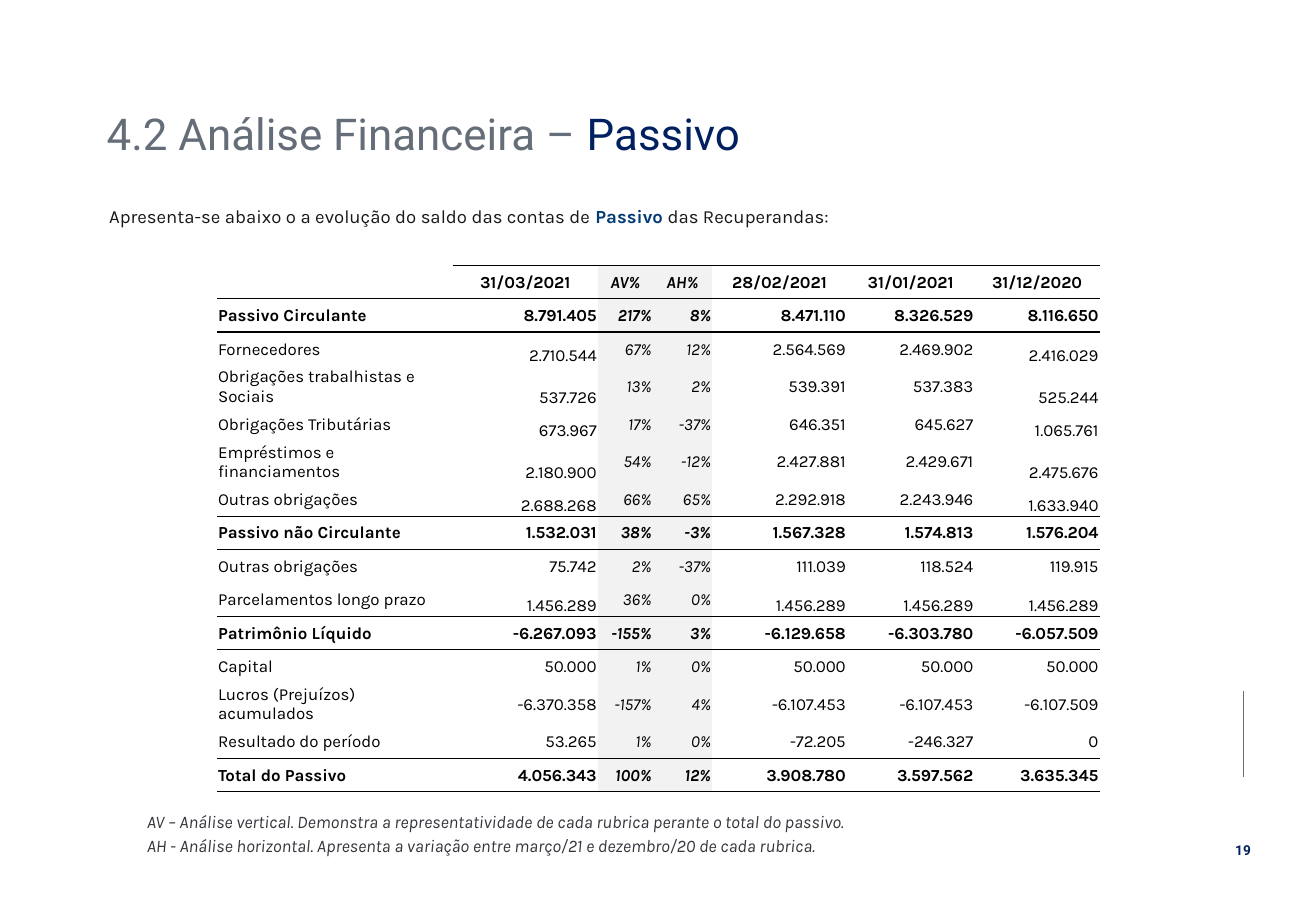
"""Builds the slide on the evolution of the liabilities (Passivo)."""
from pptx import Presentation
from pptx.dml.color import RGBColor
from pptx.enum.shapes import MSO_CONNECTOR
from pptx.enum.text import MSO_ANCHOR, PP_ALIGN
from pptx.oxml import parse_xml
from pptx.oxml.ns import nsdecls
from pptx.util import Pt

PX = 4572
LEFT, CENTER, RIGHT, JUSTIFY = PP_ALIGN.LEFT, PP_ALIGN.CENTER, PP_ALIGN.RIGHT, PP_ALIGN.JUSTIFY
TOP, MIDDLE, BOTTOM = MSO_ANCHOR.TOP, MSO_ANCHOR.MIDDLE, MSO_ANCHOR.BOTTOM
BLACK = RGBColor(0x00, 0x00, 0x00)
NAVY = RGBColor(0x00, 0x20, 0x60)
BLUE = RGBColor(0x03, 0x3C, 0x75)
INK = RGBColor(0x18, 0x17, 0x17)
CHARCOAL = RGBColor(0x33, 0x36, 0x3C)
GRAY = RGBColor(0x65, 0x6D, 0x78)
SHADE = RGBColor(0xF2, 0xF2, 0xF2)


def add_run(p, text, color, **fmt):
    r = p.add_run()
    r.text = text
    r.font.color.rgb = color
    for name, value in fmt.items():
        setattr(r.font, name, value)


def add_border(cell, side, width):
    if width:
        xml = (f'<a:{side} {nsdecls("a")} w="{Pt(width)}"><a:solidFill>'
               f'<a:srgbClr val="{BLACK}"/></a:solidFill></a:{side}>')
    else:
        xml = f'<a:{side} {nsdecls("a")} w="0"><a:noFill/></a:{side}>'
    cell._tc.get_or_add_tcPr().append(parse_xml(xml))


prs = Presentation()
prs.slide_width, prs.slide_height = 2166 * PX, 1500 * PX
s = prs.slides.add_slide(prs.slide_layouts[6])

rule = s.shapes.add_connector(MSO_CONNECTOR.STRAIGHT, 2046 * PX, 1138 * PX, 2046 * PX, 1280 * PX)
rule.line.color.rgb = GRAY
rule.line.width = Pt(0.5)
rule._element.spPr.append(parse_xml(f'<a:effectLst {nsdecls("a")}/>'))

TITLE = dict(name="Roboto", size=Pt(26))
INTRO = dict(name="Karla", size=Pt(11))
NOTE = dict(name="Karla", size=Pt(10.5), italic=True)
NUMBER = dict(name="Roboto", size=Pt(8.1), bold=True)
TEXTS = [
    ((2012, 1376, 68, 48), False, TOP, CENTER, 1, 0, NUMBER, [[("19", NAVY, {})]]),
    ((156, 172, 1636, 106), True, MIDDLE, LEFT, 0.9, 0, TITLE,
     [[("4.2 Análise Financeira – ", GRAY, {}), ("Passivo", NAVY, {})]]),
    ((160, 310, 1740, 70), True, TOP, JUSTIFY, 1.5, 0, INTRO,
     [[("Apresenta-se abaixo o a evolução do saldo das contas de ", INK, {}),
       ("Passivo", BLUE, {"bold": True}),
       (" das Recuperandas:", INK, {})]]),
    ((160, 1320, 1740, 100), True, TOP, JUSTIFY, 1.14, 62, NOTE,
     [[("AV – Análise vertical. Demonstra a representatividade de cada rubrica "
        "perante o total do passivo.", CHARCOAL, {})],
      [("AH - Análise horizontal. Apresenta a variação entre março/21 e dezembro/20 "
        "de cada rubrica.", CHARCOAL, {})]]),
]
for box, wrap, anchor, align, spacing, indent, fmt, paragraphs in TEXTS:
    tf = s.shapes.add_textbox(*(n * PX for n in box)).text_frame
    tf.word_wrap = wrap
    tf.vertical_anchor = anchor
    for i, runs in enumerate(paragraphs):
        p = tf.add_paragraph() if i else tf.paragraphs[0]
        p.alignment = align
        p.line_spacing = spacing
        if indent:
            p._p.get_or_add_pPr().set("marL", str(indent * PX))
        for text, color, extra in runs:
            add_run(p, text, color, **fmt, **extra)

ROWS = [
    ["", "31/03/2021", "AV%", "AH%", "28/02/2021", "31/01/2021", "31/12/2020"],
    ["Passivo Circulante", "8.791.405", "217%", "8%", "8.471.110", "8.326.529", "8.116.650"],
    ["Fornecedores", "2.710.544", "67%", "12%", "2.564.569", "2.469.902", "2.416.029"],
    ["Obrigações trabalhistas e Sociais", "537.726", "13%", "2%", "539.391", "537.383", "525.244"],
    ["Obrigações Tributárias", "673.967", "17%", "-37%", "646.351", "645.627", "1.065.761"],
    ["Empréstimos e financiamentos", "2.180.900", "54%", "-12%",
     "2.427.881", "2.429.671", "2.475.676"],
    ["Outras obrigações", "2.688.268", "66%", "65%", "2.292.918", "2.243.946", "1.633.940"],
    ["Passivo não Circulante", "1.532.031", "38%", "-3%", "1.567.328", "1.574.813", "1.576.204"],
    ["Outras obrigações", "75.742", "2%", "-37%", "111.039", "118.524", "119.915"],
    ["Parcelamentos longo prazo", "1.456.289", "36%", "0%", "1.456.289", "1.456.289", "1.456.289"],
    ["Patrimônio Líquido", "-6.267.093", "-155%", "3%", "-6.129.658", "-6.303.780", "-6.057.509"],
    ["Capital", "50.000", "1%", "0%", "50.000", "50.000", "50.000"],
    ["Lucros (Prejuízos) acumulados", "-6.370.358", "-157%", "4%",
     "-6.107.453", "-6.107.453", "-6.107.509"],
    ["Resultado do período", "53.265", "1%", "0%", "-72.205", "-246.327", "0"],
    ["Total do Passivo", "4.056.343", "100%", "12%", "3.908.780", "3.597.562", "3.635.345"],
]
COLUMNS = [388, 239, 90, 98, 222, 210, 206]
TOTALS = {1, 7, 10, 14}
TWO_LINES = {3, 5, 12}
PERCENTS = {2, 3}
LOW_CELLS = {row: {1, 6} for row in range(2, 7)} | {9: {1, 4, 5, 6}}
ROW_HEIGHT, TALL_HEIGHT = 55, 69

frame = s.shapes.add_table(len(ROWS), len(COLUMNS), 357 * PX, 437 * PX,
                           sum(COLUMNS) * PX, len(ROWS) * ROW_HEIGHT * PX)
table = frame.table
table.first_row = table.horz_banding = False
for column, width in zip(table.columns, COLUMNS):
    column.width = width * PX
for i, values in enumerate(ROWS):
    table.rows[i].height = (TALL_HEIGHT if i in TWO_LINES else ROW_HEIGHT) * PX
    for j, text in enumerate(values):
        cell = table.cell(i, j)
        cell.margin_left = cell.margin_right = cell.margin_top = 2 * PX
        cell.margin_bottom = 0
        cell.vertical_anchor = BOTTOM if j in LOW_CELLS.get(i, ()) else MIDDLE
        top = 0.5 if i in TOTALS or (i == 0 and j) else 1 if i - 1 in TOTALS else 0
        bottom = 1 if i in TOTALS else 0.5 if i + 1 in TOTALS else 0
        for side, width in (("lnL", 0), ("lnR", 0), ("lnT", top), ("lnB", bottom)):
            add_border(cell, side, width)
        if j in PERCENTS:
            cell.fill.solid()
            cell.fill.fore_color.rgb = SHADE
        else:
            cell.fill.background()
        p = cell.text_frame.paragraphs[0]
        p.alignment = LEFT if j == 0 else CENTER if i == 0 else RIGHT
        if text:
            add_run(p, text, BLACK, name="Karla", size=Pt(10),
                    bold=i == 0 or i in TOTALS, italic=j in PERCENTS)
        else:
            p._p.get_or_add_endParaRPr().set("sz", "1000")

prs.save("out.pptx")
